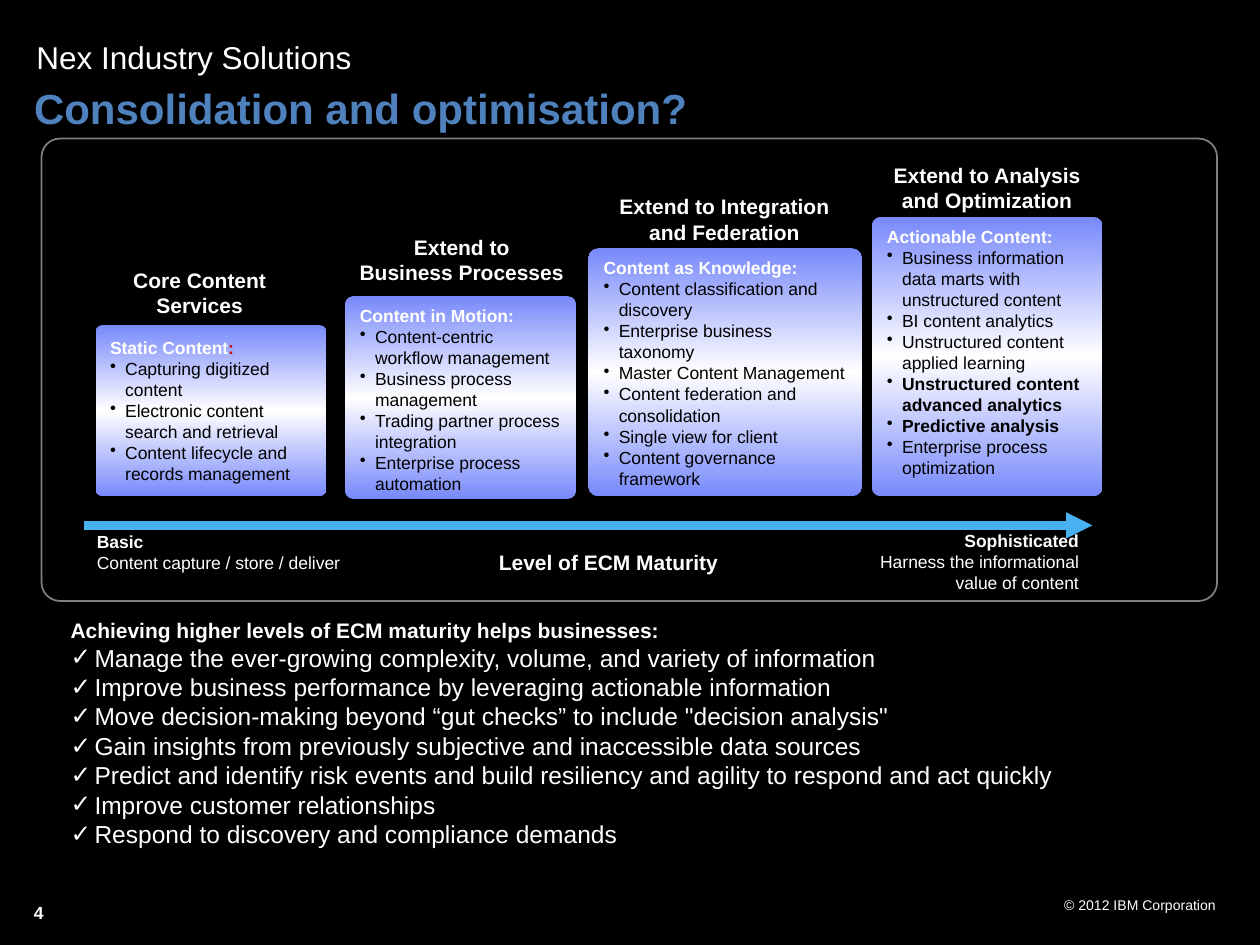
import copy

import pptx
import pptx.dml.color
import pptx.enum.shapes
import pptx.enum.text
import pptx.oxml
import pptx.util
from pptx.util import Inches

RGBColor = pptx.dml.color.RGBColor
ALIGN = pptx.enum.text.PP_ALIGN
ANCHOR = pptx.enum.text.MSO_ANCHOR
SHAPE = pptx.enum.shapes.MSO_SHAPE

BLACK = RGBColor(0x00, 0x00, 0x00)
WHITE = RGBColor(0xFF, 0xFF, 0xFF)
TITLE_BLUE = RGBColor(0x4F, 0x81, 0xBD)
CARD_BLUE = RGBColor(0x78, 0x89, 0xFB)
ARROW_BLUE = RGBColor(0x48, 0xB1, 0xF0)
GREY = RGBColor(0x80, 0x80, 0x80)
RED = RGBColor(0xCC, 0x00, 0x00)
FONT = "Arial"


def add_line(frame, text, size, colour=WHITE, bold=False, align=ALIGN.LEFT, indent=0, mark=None):
    para = frame.paragraphs[0]
    if para.runs:
        para = frame.add_paragraph()
    properties = para._p.get_or_add_pPr()
    properties.set("marL", str(Inches(indent)))
    properties.set("indent", str(-Inches(indent)))
    bullet = pptx.oxml.parse_xml(
        '<a:buNone xmlns:a="http://schemas.openxmlformats.org/drawingml/2006/main"/>'
    )
    if mark:
        bullet = pptx.oxml.parse_xml(
            '<a:buChar xmlns:a="http://schemas.openxmlformats.org/drawingml/2006/main" '
            f'char="{mark}"/>'
        )
    properties.append(bullet)
    para.alignment = align
    para.space_before = pptx.util.Pt(0)
    for number, part in enumerate(text.split("\n")):
        if number:
            para.add_line_break()
        span = para.add_run()
        span.text = part
        span.font.name = FONT
        span.font.size = pptx.util.Pt(size)
        span.font.bold = bold
        span.font.color.rgb = colour
    return para


def add_label(slide, place, lines, size, align=ALIGN.LEFT, anchor=ANCHOR.MIDDLE, margin=0.1):
    box = slide.shapes.add_textbox(*[Inches(length) for length in place])
    frame = box.text_frame
    frame.word_wrap = True
    frame.vertical_anchor = anchor
    frame.margin_top = frame.margin_bottom = Inches(margin)
    for text, bold in lines:
        add_line(frame, text, size, bold=bold, align=align)


deck = pptx.Presentation()
deck.slide_width = Inches(10)
deck.slide_height = Inches(7.5)
page = deck.slides.add_slide(deck.slide_layouts[1])
page.background.fill.solid()
page.background.fill.fore_color.rgb = BLACK

title = page.shapes.title
title.left, title.top, title.width, title.height = Inches(0.17), Inches(0.58), Inches(9.02), Inches(0.55)
title.text_frame.auto_size = pptx.enum.text.MSO_AUTO_SIZE.NONE
title.text_frame.vertical_anchor = ANCHOR.MIDDLE
add_line(title.text_frame, "Consolidation and optimisation?", 24, TITLE_BLUE, True)

add_label(page, (0.19, 0.25, 4, 0.4), [("Nex Industry Solutions", False)], 18, anchor=ANCHOR.TOP, margin=0.05)
add_label(page, (6.41, 7.07, 3.34, 0.23), [("© 2012 IBM Corporation", False)], 8, ALIGN.RIGHT, ANCHOR.TOP, 0.05)
add_label(page, (0.17, 7.11, 0.75, 0.35), [("4", True)], 10, anchor=ANCHOR.TOP, margin=0.05)

panel = page.shapes.add_shape(SHAPE.ROUNDED_RECTANGLE, Inches(0.33), Inches(1.1), Inches(9.33), Inches(3.67))
panel.adjustments[0] = 0.04
panel.shadow.inherit = False
panel.fill.background()
panel.line.color.rgb = GREY
panel.line.width = pptx.util.Pt(1)

stages = [
    ("Core Content Services", (0.67, 2.14, 1.83, 0.36), (0.76, 2.58, 1.83, 1.36), "Static Content", [
        "Capturing digitized content",
        "Electronic content search and retrieval",
        "Content lifecycle and records management",
    ]),
    ("Extend to\nBusiness Processes", (2.75, 1.88, 1.83, 0.36), (2.74, 2.35, 1.83, 1.61), "Content in Motion:", [
        "Content-centric workflow management",
        "Business process management",
        "Trading partner process integration",
        "Enterprise process automation",
    ]),
    ("Extend to Integration and Federation", (4.75, 1.56, 2, 0.36), (4.67, 1.97, 2.17, 1.97), "Content as Knowledge:", [
        "Content classification and discovery",
        "Enterprise business taxonomy",
        "Master Content Management",
        "Content federation and consolidation",
        "Single view for client",
        "Content governance framework",
    ]),
    ("Extend to Analysis and Optimization", (6.92, 1.31, 1.83, 0.36), (6.92, 1.72, 1.83, 2.22), "Actionable Content:", [
        "Business information data marts with unstructured content",
        "BI content analytics",
        "Unstructured content applied learning",
        "Unstructured content advanced analytics",
        "Predictive analysis",
        "Enterprise process optimization",
    ]),
]
bold_points = ["Unstructured content advanced analytics", "Predictive analysis"]

for stage, label_place, card_place, heading, points in stages:
    card = page.shapes.add_shape(SHAPE.ROUNDED_RECTANGLE, *[Inches(length) for length in card_place])
    card.adjustments[0] = 0.04
    card.shadow.inherit = False
    card.line.fill.background()
    card.fill.gradient()
    card.fill.gradient_angle = 90
    for stop in card.fill.gradient_stops:
        stop.color.rgb = CARD_BLUE
    stop_list = card.element.xpath(".//a:gsLst")[0]
    stop_list.insert(1, copy.deepcopy(stop_list[0]))
    middle = card.fill.gradient_stops[1]
    middle.position = 0.5
    middle.color.rgb = WHITE

    frame = card.text_frame
    frame.word_wrap = True
    frame.vertical_anchor = ANCHOR.TOP
    heading_para = add_line(frame, heading, 10, bold=True, indent=0.12)
    if not heading.endswith(":"):
        frame.vertical_anchor = ANCHOR.MIDDLE
        colon = heading_para.add_run()
        colon.text = ":"
        colon.font.name = FONT
        colon.font.size = pptx.util.Pt(10)
        colon.font.bold = True
        colon.font.color.rgb = RED
    for point in points:
        add_line(frame, point, 10, BLACK, point in bold_points, indent=0.12, mark="•")
    add_label(page, label_place, [(stage, True)], 12, ALIGN.CENTER)

arrow = page.shapes.add_connector(
    pptx.enum.shapes.MSO_CONNECTOR.STRAIGHT, Inches(0.67), Inches(4.17), Inches(8.67), Inches(4.17)
)
arrow.line.color.rgb = ARROW_BLUE
arrow.line.width = pptx.util.Pt(5)
arrow.line._get_or_add_ln().append(pptx.oxml.parse_xml(
    '<a:tailEnd xmlns:a="http://schemas.openxmlformats.org/drawingml/2006/main" type="triangle"/>'
))
arrow.element.spPr.append(pptx.oxml.parse_xml(
    '<a:effectLst xmlns:a="http://schemas.openxmlformats.org/drawingml/2006/main"/>'
))

add_label(page, (3.58, 4.28, 2.5, 0.36), [("Level of ECM Maturity", True)], 12, ALIGN.CENTER)
add_label(page, (0.67, 4.2, 2.33, 0.36), [("Basic", True), ("Content capture / store / deliver", False)], 10)
add_label(
    page, (6.58, 4.28, 2.08, 0.36),
    [("Sophisticated", True), ("Harness the informational", False), ("value of content", False)],
    10, ALIGN.RIGHT,
)

benefits = page.placeholders[1]
benefits.left, benefits.top, benefits.width, benefits.height = Inches(0.46), Inches(4.85), Inches(9.33), Inches(1.93)
frame = benefits.text_frame
frame.auto_size = pptx.enum.text.MSO_AUTO_SIZE.NONE
add_line(frame, "Achieving higher levels of ECM maturity helps businesses:", 12, bold=True, indent=0.19)
for benefit in [
    "Manage the ever-growing complexity, volume, and variety of information",
    "Improve business performance by leveraging actionable information",
    "Move decision-making beyond “gut checks” to include \"decision analysis\"",
    "Gain insights from previously subjective and inaccessible data sources",
    "Predict and identify risk events and build resiliency and agility to respond and act quickly",
    "Improve customer relationships",
    "Respond to discovery and compliance demands",
]:
    add_line(frame, benefit, 14, indent=0.19, mark="✓")

deck.save("out.pptx")
